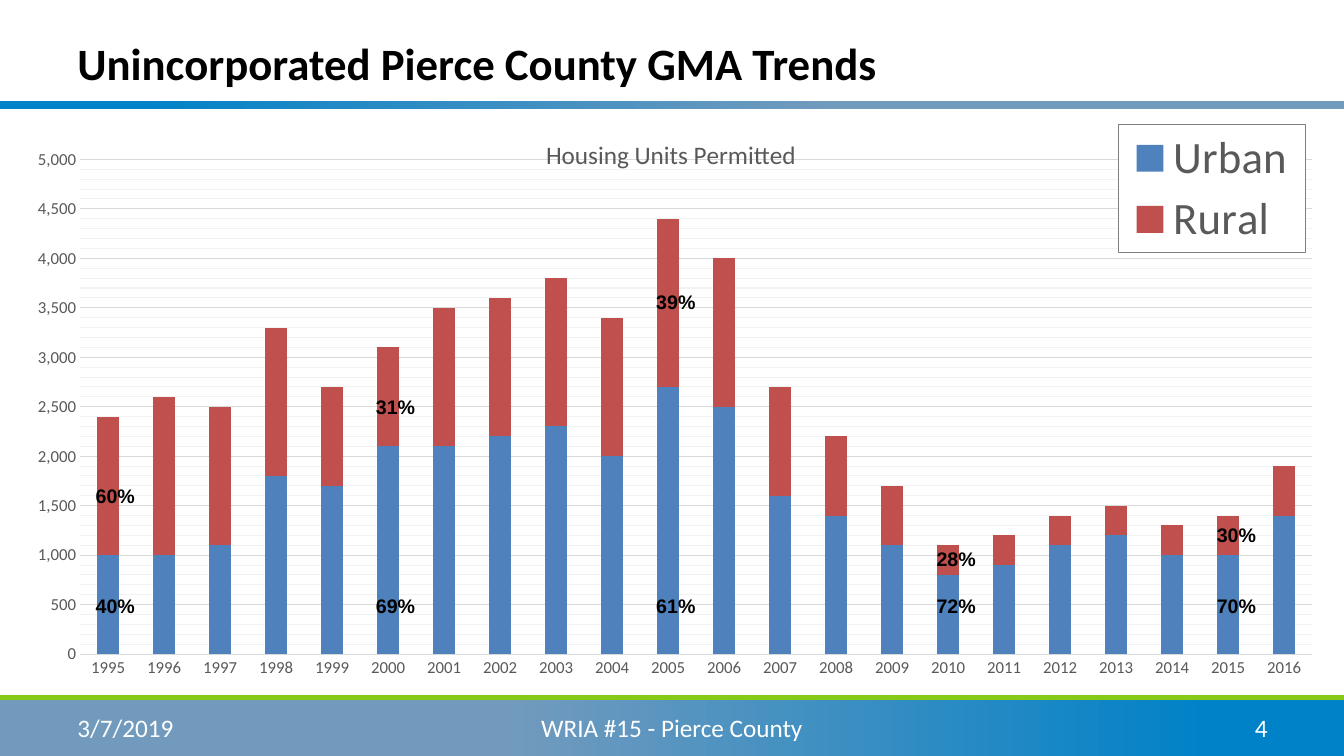
from lxml import etree
from pptx import Presentation
from pptx.chart.data import CategoryChartData
from pptx.dml.color import RGBColor
from pptx.enum.chart import XL_CHART_TYPE, XL_LEGEND_POSITION, XL_TICK_MARK
from pptx.enum.shapes import MSO_CONNECTOR, MSO_SHAPE
from pptx.enum.text import MSO_ANCHOR, PP_ALIGN
from pptx.oxml import parse_xml
from pptx.oxml.ns import nsdecls, qn
from pptx.util import Inches, Pt

STACKED = XL_CHART_TYPE.COLUMN_STACKED
LEGEND_BOTTOM = XL_LEGEND_POSITION.BOTTOM
NO_TICK = XL_TICK_MARK.NONE
STRAIGHT = MSO_CONNECTOR.STRAIGHT
RECTANGLE = MSO_SHAPE.RECTANGLE
TOP, MIDDLE = MSO_ANCHOR.TOP, MSO_ANCHOR.MIDDLE
LEFT, CENTER, RIGHT = PP_ALIGN.LEFT, PP_ALIGN.CENTER, PP_ALIGN.RIGHT

COLORS = {
    "black": "000000", "white": "FFFFFF", "slate": "729ABD", "blue": "0082C8",
    "green": "86CA18", "gray": "595959", "grid": "D9D9D9", "minor": "F2F2F2",
    "border": "7F7F7F", "urban": "4F81BD", "rural": "C0504D",
}
YEARS = [str(year) for year in range(1995, 2017)]
UNITS = {
    "Urban": [1000, 1000, 1100, 1800, 1700, 2100, 2100, 2200, 2300, 2000, 2700,
              2500, 1600, 1400, 1100, 800, 900, 1100, 1200, 1000, 1000, 1400],
    "Rural": [1400, 1600, 1400, 1500, 1000, 1000, 1400, 1400, 1500, 1400, 1700,
              1500, 1100, 800, 600, 300, 300, 300, 300, 300, 400, 500],
}
SHARES = [("60%", 4.75, "40%"), ("31%", 3.87, "69%"), ("39%", 2.83, "61%"),
          ("28%", 5.38, "72%"), ("30%", 5.14, "70%")]
SHARE_LEFT, SHARE_STEP, URBAN_SHARE_TOP = 0.85, 2.78, 5.84


def rgb(name):
    """Return the named colour."""
    return RGBColor.from_string(COLORS[name])


def style_font(font, size, color, name="Calibri", bold=False):
    """Format a font."""
    font.size, font.name, font.bold = Pt(size), name, bold
    font.color.rgb = rgb(color)


def add_text(slide, text, box, size=18, color="white", font="Calibri", bold=False,
             align=LEFT, anchor=TOP, wrap=True):
    """Add a one-line text box."""
    frame = slide.shapes.add_textbox(*map(Inches, box)).text_frame
    frame.word_wrap, frame.vertical_anchor = wrap, anchor
    paragraph = frame.paragraphs[0]
    paragraph.alignment = align
    run = paragraph.add_run()
    run.text = text
    style_font(run.font, size, color, font, bold)


def add_gradient_bar(slide, top, height, stops):
    """Add a full-width bar with a horizontal gradient."""
    shape = slide.shapes.add_shape(RECTANGLE, 0, Inches(top), Inches(13.33), Inches(height))
    shape.shadow.inherit = False
    shape.line.fill.background()
    shape.fill.gradient()
    shape.fill.gradient_angle = 0
    for stop, (position, color) in zip(shape.fill.gradient_stops, stops):
        stop.position, stop.color.rgb = position, rgb(color)


def add_rule(slide, top, color, width):
    """Add a full-width horizontal line."""
    line = slide.shapes.add_connector(STRAIGHT, 0, Inches(top), Inches(13.33), Inches(top))
    line.line.color.rgb, line.line.width = rgb(color), Pt(width)
    etree.SubElement(line._element.spPr, qn("a:effectLst"))


def set_layout(parent, index, target="", **fractions):
    """Place a chart part at fractions of the chart area."""
    for layout in parent.findall(qn("c:layout")):
        parent.remove(layout)
    inner = f'<c:layoutTarget val="{target}"/>' if target else ""
    modes = "".join(f'<c:{key}Mode val="edge"/>' for key in "xy")
    values = "".join(f'<c:{key} val="{value}"/>' for key, value in fractions.items())
    parent.insert(index, parse_xml(
        f'<c:layout {nsdecls("c")}><c:manualLayout>{inner}{modes}{values}'
        '</c:manualLayout></c:layout>'))


def solid_fill(color):
    """Return the XML of a solid fill."""
    return f'<a:solidFill><a:srgbClr val="{COLORS[color]}"/></a:solidFill>'


def outline_properties(color, fill=""):
    """Return chart shape properties with a thin outline."""
    return parse_xml(f'<c:spPr {nsdecls("c", "a")}>{fill}'
                     f'<a:ln w="{Pt(0.75)}">{solid_fill(color)}</a:ln></c:spPr>')


def style_line(line, color):
    """Format a thin chart line."""
    line.color.rgb, line.width = rgb(color), Pt(0.75)


def style_axes(chart):
    """Format both axes and the gridlines."""
    for axis in (chart.category_axis, chart.value_axis):
        axis.major_tick_mark = axis.minor_tick_mark = NO_TICK
        style_font(axis.tick_labels.font, 12, "gray")
    style_line(chart.category_axis.format.line, "grid")
    values = chart.value_axis
    values.minimum_scale, values.maximum_scale = 0, 5000
    values.major_unit, values.minor_unit = 500, 100
    values.has_major_gridlines = values.has_minor_gridlines = True
    style_line(values.major_gridlines.format.line, "grid")
    values._element.find(qn("c:minorGridlines")).append(outline_properties("minor"))
    values.format.line.fill.background()
    values.tick_labels.number_format = "#,##0"
    values.tick_labels.number_format_is_linked = False


def style_legend(chart):
    """Format the boxed legend."""
    chart.has_legend = True
    legend = chart.legend
    legend.position, legend.include_in_layout = LEGEND_BOTTOM, False
    style_font(legend.font, 32, "gray")
    set_layout(legend._element, 1, x=0.84, y=0.027, w=0.143, h=0.215)
    legend._element.find(qn("c:txPr")).addprevious(
        outline_properties("border", solid_fill("white")))


def style_title(chart, text):
    """Write the chart title over the top of the plot."""
    title = chart.chart_title
    title.text_frame.text = text
    style_font(title.text_frame.paragraphs[0].runs[0].font, 18, "gray")
    set_layout(title._element, 1, x=0.4, y=0.04)
    for overlay in title._element.findall(qn("c:overlay")):
        overlay.set("val", "1")


def add_housing_chart(slide):
    """Add the stacked chart of permitted housing units."""
    data = CategoryChartData(number_format="#,##0")
    data.categories = YEARS
    for name, values in UNITS.items():
        data.add_series(name, values)
    box = map(Inches, (0.17, 1.08, 13, 5.9))
    chart = slide.shapes.add_chart(STACKED, *box, data).chart
    style_font(chart.font, 10, "black")
    plot = chart.plots[0]
    plot.gap_width, plot.overlap, plot.vary_by_categories = 150, 100, False
    for series in plot.series:
        series.format.fill.solid()
        series.format.fill.fore_color.rgb = rgb(series.name.lower())
    style_axes(chart)
    style_legend(chart)
    style_title(chart, "Housing Units Permitted")
    plot_area = chart._chartSpace.chart.plotArea
    set_layout(plot_area, 0, "inner", x=0.048, y=0.085, w=0.94, h=0.832)


def add_shares(slide):
    """Label every fifth year with its rural and urban shares."""
    for index, (rural, rural_top, urban) in enumerate(SHARES):
        left = SHARE_LEFT + index * SHARE_STEP
        for text, top in ((rural, rural_top), (urban, URBAN_SHARE_TOP)):
            add_text(slide, text, (left, top, 0.59, 0.34), 14, "black", "Arial",
                     bold=True, wrap=False)


def main():
    """Build and save the slide."""
    presentation = Presentation()
    presentation.slide_width, presentation.slide_height = Inches(13.33), Inches(7.5)
    slide = presentation.slides.add_slide(presentation.slide_layouts[6])
    add_gradient_bar(slide, 1, 0.08, [(0.1, "blue"), (0.62, "slate")])
    add_gradient_bar(slide, 6.92, 0.58, [(0.38, "slate"), (0.9, "blue")])
    add_rule(slide, 6.92, "green", 3)
    add_text(slide, "Unincorporated Pierce County GMA Trends", (0.67, 0, 12, 1.25),
             32, "black", bold=True, anchor=MIDDLE)
    add_text(slide, "3/7/2019", (0.67, 7.02, 3.11, 0.4))
    add_text(slide, "WRIA #15 - Pierce County", (0, 7.02, 13.33, 0.4), align=CENTER)
    add_text(slide, "4", (9.56, 7.02, 3.11, 0.4), align=RIGHT)
    add_housing_chart(slide)
    add_shares(slide)
    presentation.save("out.pptx")


if __name__ == "__main__":
    main()
